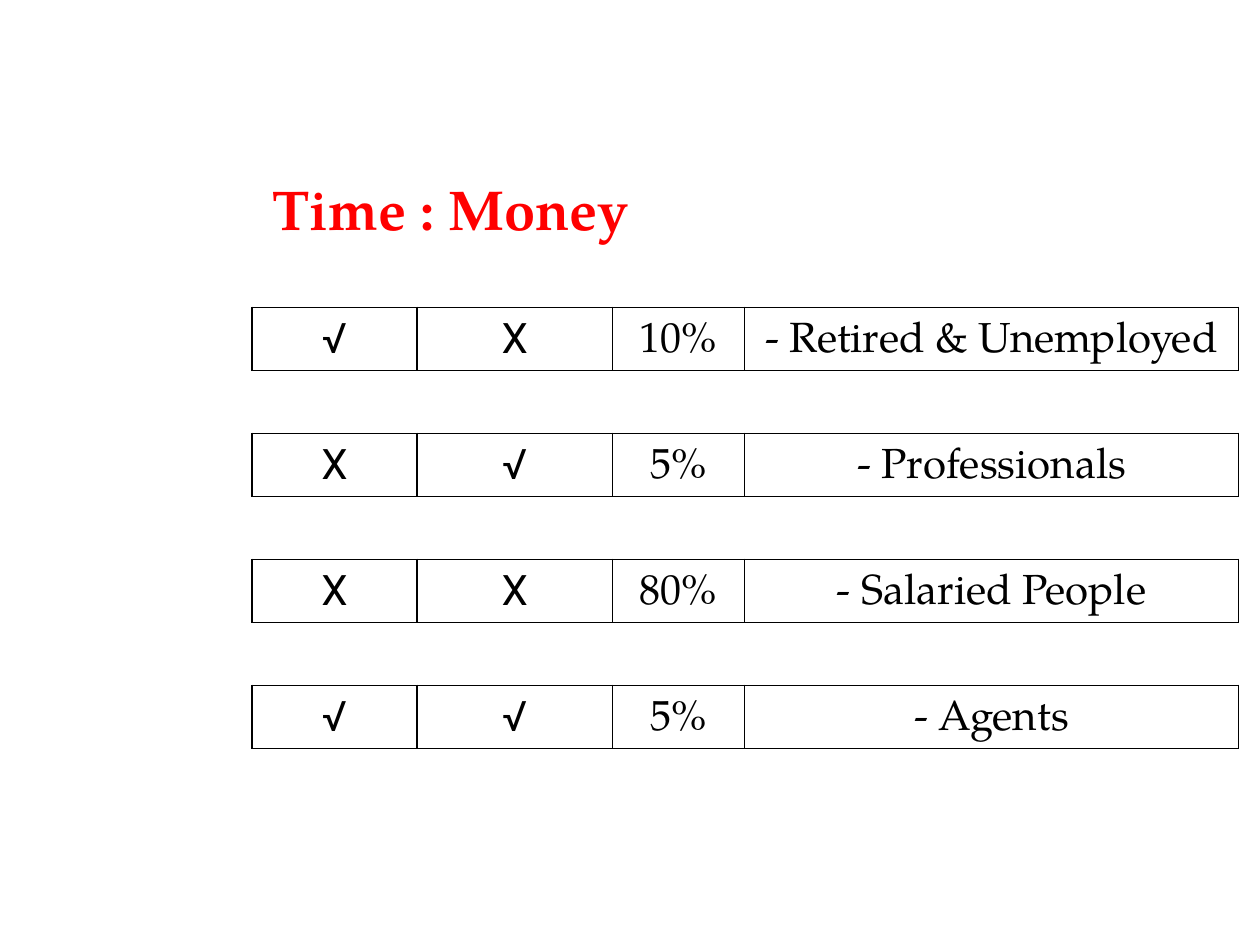
from dataclasses import dataclass

from lxml.etree import SubElement as Sub
from pptx import Presentation
from pptx.dml.color import RGBColor as Color
from pptx.enum.text import MSO_ANCHOR as Anchor, PP_ALIGN as Align
from pptx.oxml.ns import qn
from pptx.table import _Cell as Cell
from pptx.text.text import TextFrame as Frame
from pptx.util import Inches, Pt


@dataclass(frozen=True)
class Theme:
    """Colours, fonts and type sizes of the slide."""
    ink: str = "000000"
    head: str = "FF0000"
    serif: str = "TeX Gyre Pagella"
    sans: str = "Roboto"
    big: int = 32
    body: int = 24
    rule: int = 1


@dataclass(frozen=True)
class Group:
    """One group of people with its time, money and share."""
    time: str
    money: str
    share: str
    name: str


THEME = Theme()
GROUPS = [
    Group("√", "X", "10%", "- Retired & Unemployed"),
    Group("X", "√", "5%", "- Professionals"),
    Group("X", "X", "80%", "- Salaried People"),
    Group("√", "√", "5%", "- Agents"),
]
COLS = [1.31, 1.55, 1.05, 3.92]
TOP, STEP = 0.36, 0.5


def write(frame: Frame, text: str, *, font: str = THEME.serif,
          size: int = THEME.body, color: str = THEME.ink, bold: bool = False) -> None:
    """Put one centred, formatted line in a text frame."""
    para = frame.paragraphs[0]
    para.alignment = Align.CENTER
    run = para.add_run()
    run.text = text
    run.font.name, run.font.size, run.font.bold = font, Pt(size), bold
    run.font.color.rgb = Color.from_string(color)


def edge(cell: Cell, sides: str) -> None:
    """Rule the named sides of a cell and clear the others."""
    props = cell._tc.get_or_add_tcPr()
    for side in "LRTB":
        line = Sub(props, qn(f"a:ln{side}"), w=str(Pt(THEME.rule)))
        if side in sides:
            fill = Sub(line, qn("a:solidFill"))
            Sub(fill, qn("a:srgbClr"), val=THEME.ink)
        else:
            Sub(line, qn("a:noFill"))
    cell.fill.background()


def pad(cell: Cell, wide: float, high: float) -> None:
    """Set the side and end margins of a cell."""
    cell.margin_left = cell.margin_right = Inches(wide)
    cell.margin_top = cell.margin_bottom = Inches(high)


def grid(slide) -> None:
    """Draw the groups as ruled rows with an open row above each."""
    count = 2 * len(GROUPS)
    high = TOP + STEP * (count - 1)
    table = slide.shapes.add_table(count, len(COLS), Inches(2), Inches(2.08),
                                   Inches(sum(COLS)), Inches(high)).table
    table.first_row = table.horz_banding = False
    for col, wide in zip(table.columns, COLS):
        col.width = Inches(wide)
    for i, row in enumerate(table.rows):
        row.height = Inches(STEP if i else TOP)
    for i, group in enumerate(GROUPS):
        texts = (group.time, group.money, group.share, group.name)
        for j, text in enumerate(texts):
            gap, cell = table.cell(2 * i, j), table.cell(2 * i + 1, j)
            edge(gap, "TB" if i else "B")
            pad(gap, 0, 0)
            edge(cell, "LRTB")
            pad(cell, 0.01, 0.05)
            cell.vertical_anchor = Anchor.BOTTOM
            write(cell.text_frame, text, font=THEME.sans if j < 2 else THEME.serif)


def main() -> None:
    """Build and save the slide."""
    deck = Presentation()
    deck.slide_width, deck.slide_height = Inches(10), Inches(7.5)
    slide = deck.slides.add_slide(deck.slide_layouts[5])
    title = slide.shapes.title
    title.left, title.top = Inches(1.92), Inches(1.33)
    title.width, title.height = Inches(3.32), Inches(0.64)
    title.text_frame.vertical_anchor = Anchor.MIDDLE
    write(title.text_frame, "Time : Money", size=THEME.big, color=THEME.head, bold=True)
    grid(slide)
    deck.save("out.pptx")


if __name__ == "__main__":
    main()
